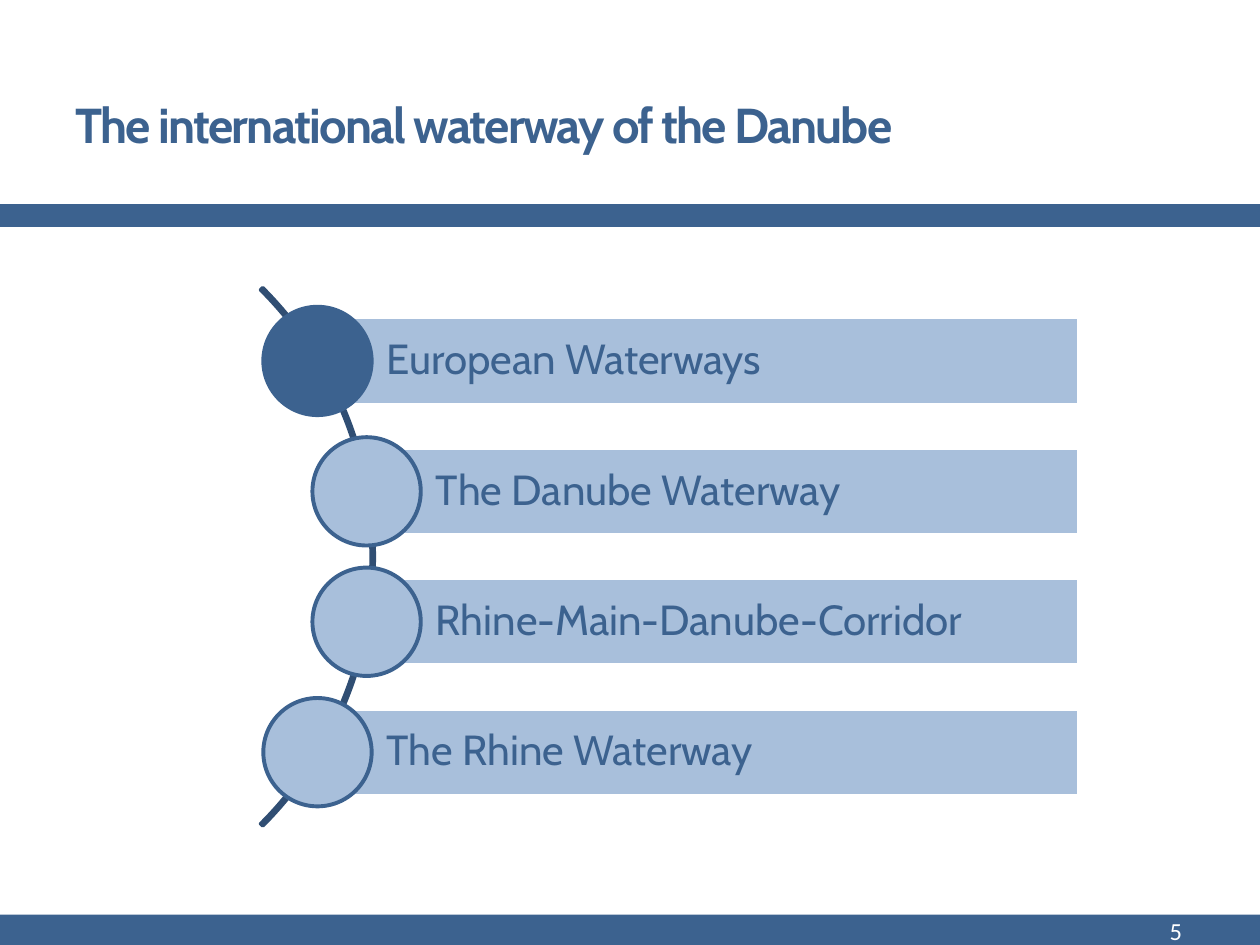
"""Builds the Danube waterway agenda slide with a curved list of four topics."""
from pptx import Presentation, util as u
from pptx.dml.color import RGBColor
from pptx.enum import shapes, text

TITLE = "The international waterway of the Danube"
PAGE = "5"
TOPICS = ["European Waterways", "The Danube Waterway",
          "Rhine-Main-Danube-Corridor", "The Rhine Waterway"]
CURRENT = 0
COLORS = {"blue": "3C628F", "light": "A8BFDB", "arc": "304E73", "white": "FFFFFF"}
BANDS = [(-0.04, 7.26, 10.16, 0.5), (0, 1.62, 10.12, 0.18)]
CENTERS_X = [2.52, 2.91, 2.91, 2.52]
FIRST_Y, STEP = 2.865, 1.035
BAR_RIGHT, BAR_H, DOT = 8.56, 0.69, 0.86


def rgb(name):
    return RGBColor.from_string(COLORS[name])


def add_shape(s, kind, box, fill=None, line=None, width=0):
    sp = s.shapes.add_shape(kind, *map(u.Inches, box))
    sp.shadow.inherit = False
    if fill:
        sp.fill.solid()
        sp.fill.fore_color.rgb = rgb(fill)
    else:
        sp.fill.background()
    if line:
        sp.line.color.rgb = rgb(line)
        sp.line.width = u.Pt(width)
    else:
        sp.line.fill.background()
    return sp


def write(sp, content, size, color, font, align=text.PP_ALIGN.LEFT):
    tf = sp.text_frame
    tf.text = content
    tf.word_wrap = True
    tf.vertical_anchor = text.MSO_ANCHOR.MIDDLE
    p = tf.paragraphs[0]
    p.alignment = align
    r = p.runs[0]
    r.font.size = u.Pt(size)
    r.font.name = font
    r.font.color.rgb = rgb(color)
    return p


def add_topic(s, i, topic):
    x, y = CENTERS_X[i], FIRST_Y + i * STEP
    bar = add_shape(s, shapes.MSO_SHAPE.RECTANGLE,
                    (x, y - BAR_H / 2, BAR_RIGHT - x, BAR_H), "light", "white", 2.08)
    p = write(bar, topic, 24, "blue", "Cabin")
    p.line_spacing = 0.9
    tf = bar.text_frame
    tf.margin_left = u.Inches(0.55)
    tf.margin_top = tf.margin_right = tf.margin_bottom = u.Inches(0.07)
    add_shape(s, shapes.MSO_SHAPE.OVAL, (x - DOT / 2, y - DOT / 2, DOT, DOT),
              "blue" if i == CURRENT else "light", "blue", 2.25)


def main():
    prs = Presentation()
    prs.slide_width, prs.slide_height = u.Inches(10), u.Inches(7.5)
    s = prs.slides.add_slide(prs.slide_layouts[6])

    for box in BANDS:
        add_shape(s, shapes.MSO_SHAPE.RECTANGLE, box, "blue")

    title = s.shapes.add_textbox(*map(u.Inches, (0.5, 0.44, 9, 1.08)))
    r = write(title, TITLE, 28, "blue", "Cabin").runs[0]
    r.font.bold = True
    r.font._element.set("spc", "-100")

    number = s.shapes.add_textbox(*map(u.Inches, (8.31, 7.21, 1.17, 0.36)))
    write(number, PAGE, 14, "white", "Calibri", text.PP_ALIGN.RIGHT)

    arc = add_shape(s, shapes.MSO_SHAPE.BLOCK_ARC, (-3.07, 1.4, 6.04, 6.04),
                    line="arc", width=2.08)
    for i, value in enumerate((189, 27, 0.004)):
        arc.adjustments[i] = value

    for i, topic in enumerate(TOPICS):
        add_topic(s, i, topic)
    prs.save("out.pptx")


if __name__ == "__main__":
    main()
